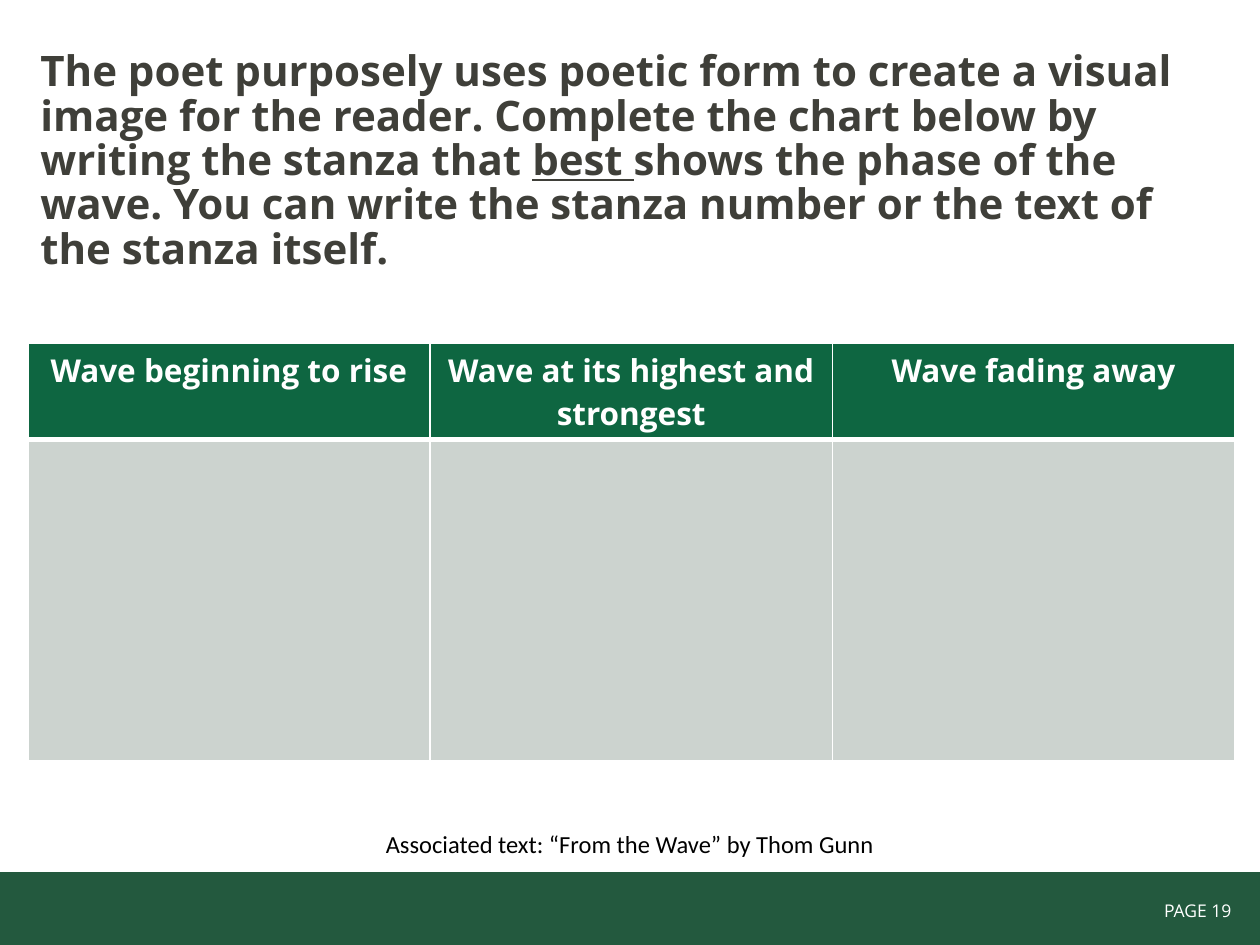
from dataclasses import dataclass

from lxml.etree import SubElement
from pptx import Presentation
from pptx.dml.color import RGBColor
from pptx.enum.shapes import MSO_SHAPE as Shape
from pptx.enum.text import MSO_ANCHOR as Anchor, MSO_AUTO_SIZE as AutoSize, PP_ALIGN as Align
from pptx.oxml.ns import qn
from pptx.slide import Slide
from pptx.util import Cm, Pt

WHITE = RGBColor(0xFF, 0xFF, 0xFF)
BLACK = RGBColor(0x00, 0x00, 0x00)
CHARCOAL = RGBColor(0x3F, 0x3F, 0x39)
FOOTER_GREEN = RGBColor(0x23, 0x59, 0x3E)
HEADER_GREEN = RGBColor(0x0E, 0x66, 0x41)
CELL_GREY = RGBColor(0xCC, 0xD3, 0xCF)


@dataclass
class SlideBuilder:
    """Draws styled elements on the current slide."""

    slide: Slide
    font_name: str = "Open Sans"

    def style(self, paragraph, size, color, bold=False, align=None, font_name=None):
        font = paragraph.font
        font.name = font_name or self.font_name
        font.size = Pt(size)
        font.bold = bold
        font.color.rgb = color
        paragraph.alignment = align

    def band(self, left, top, width, height, color):
        shape = self.slide.shapes.add_shape(
            Shape.RECTANGLE, Cm(left), Cm(top), Cm(width), Cm(height))
        shape.shadow.inherit = False
        shape.fill.solid()
        shape.fill.fore_color.rgb = color
        shape.line.fill.background()

    def label(self, left, top, width, height, text, **style):
        box = self.slide.shapes.add_textbox(Cm(left), Cm(top), Cm(width), Cm(height))
        box.text_frame.word_wrap = True
        paragraph = box.text_frame.paragraphs[0]
        paragraph.text = text
        self.style(paragraph, **style)

    def body(self, left, top, width, height, runs, **style):
        body = self.slide.placeholders[1]
        body.left, body.top, body.width, body.height = map(Cm, (left, top, width, height))
        frame = body.text_frame
        frame.auto_size = AutoSize.NONE
        frame.vertical_anchor = Anchor.TOP
        paragraph = frame.paragraphs[0]
        properties = paragraph._p.get_or_add_pPr()
        properties.set("marL", "0")
        properties.set("indent", "0")
        SubElement(properties, qn("a:buNone"))
        paragraph.space_before = Pt(0)
        paragraph.line_spacing = 0.88
        self.style(paragraph, **style)
        for text, underlined in runs:
            run = paragraph.add_run()
            run.text = text
            if underlined:
                run.font.underline = True

    def border(self, cell, **widths):
        properties = cell._tc.get_or_add_tcPr()
        for side in ("L", "R", "T", "B"):
            line = SubElement(properties, qn(f"a:ln{side}"), w=str(Pt(widths.get(side, 1))))
            fill = SubElement(line, qn("a:solidFill"))
            SubElement(fill, qn("a:srgbClr"), val=str(WHITE))

    def chart_table(self, left, top, width, row_heights, headings):
        table = self.slide.shapes.add_table(
            len(row_heights), len(headings), Cm(left), Cm(top),
            Cm(width), Cm(sum(row_heights))).table
        for row, height in zip(table.rows, row_heights):
            row.height = Cm(height)
        for column, heading in enumerate(headings):
            header, answer = table.cell(0, column), table.cell(1, column)
            self.border(header, B=3)
            self.border(answer, T=3)
            for cell, color in ((header, HEADER_GREEN), (answer, CELL_GREY)):
                cell.fill.solid()
                cell.fill.fore_color.rgb = color
            paragraph = header.text_frame.paragraphs[0]
            paragraph.text = heading
            self.style(paragraph, 18, WHITE, bold=True, align=Align.CENTER)


def main():
    presentation = Presentation()
    presentation.slide_width, presentation.slide_height = Cm(25.4), Cm(19.05)
    slide = presentation.slides.add_slide(presentation.slide_layouts[1])
    title = slide.shapes.title
    title.element.getparent().remove(title.element)

    builder = SlideBuilder(slide)
    builder.band(0, 17.58, 25.4, 1.47, FOOTER_GREEN)
    builder.label(21.03, 18.01, 4.04, 0.69, "PAGE 19",
                  size=10, color=WHITE, align=Align.RIGHT)
    builder.body(0.56, 0.91, 24.33, 16.1, [
        ("The poet purposely uses poetic form to create a visual image for the reader. "
         "Complete the chart below by writing the stanza that ", False),
        ("best ", True),
        ("shows the phase of the wave. You can write the stanza number "
         "or the text of the stanza itself.", False),
    ], size=24, color=CHARCOAL, bold=True)
    builder.chart_table(0.56, 6.91, 24.33, (1.95, 6.48), (
        "Wave beginning to rise", "Wave at its highest and strongest", "Wave fading away"))
    builder.label(-2.54, 16.59, 30.48, 0.86, "Associated text: “From the Wave” by Thom Gunn",
                  size=14, color=BLACK, align=Align.CENTER, font_name="Calibri")
    presentation.save("out.pptx")


if __name__ == "__main__":
    main()
